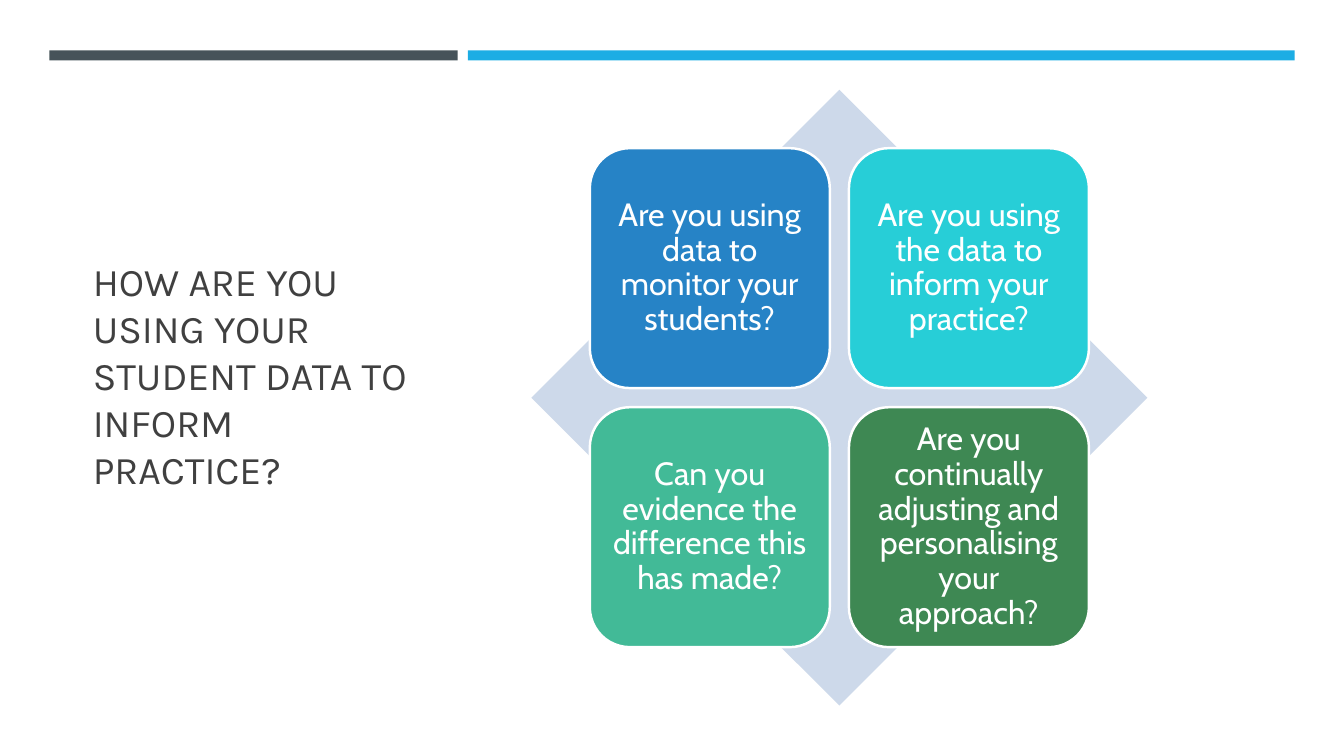
from pptx import Presentation
from pptx.dml.color import RGBColor
from pptx.enum.shapes import MSO_SHAPE as Shape
from pptx.enum.text import MSO_ANCHOR as Anchor, MSO_AUTO_SIZE as AutoSize, PP_ALIGN as Align
from pptx.util import Inches, Pt

WHITE = RGBColor(0xFF, 0xFF, 0xFF)
CHARCOAL = RGBColor(0x40, 0x40, 0x40)
SLATE = RGBColor(0x46, 0x53, 0x59)
SKY = RGBColor(0x1C, 0xAD, 0xE4)
PALE_BLUE = RGBColor(0xCD, 0xD9, 0xEA)
BLUE = RGBColor(0x26, 0x83, 0xC6)
TURQUOISE = RGBColor(0x27, 0xCE, 0xD7)
MINT = RGBColor(0x42, 0xBA, 0x97)
GREEN = RGBColor(0x3E, 0x88, 0x53)

QUESTIONS = [
    ("Are you using data to monitor your students?", BLUE),
    ("Are you using the data to inform your practice?", TURQUOISE),
    ("Can you evidence the difference this has made?", MINT),
    ("Are you continually adjusting and personalising your approach?", GREEN),
]


def write(frame, wording, *, font, size, color, align, spacing=1.0, inset=0.1):
    frame.word_wrap = True
    frame.auto_size = AutoSize.NONE
    frame.vertical_anchor = Anchor.MIDDLE
    frame.margin_left = frame.margin_right = Inches(inset)
    frame.margin_top = frame.margin_bottom = Inches(inset)
    paragraph = frame.paragraphs[0]
    paragraph.alignment = align
    paragraph.line_spacing = spacing
    run = paragraph.add_run()
    run.text = wording
    run.font.name = font
    run.font.size = Pt(size)
    run.font.color.rgb = color


class QuestionSlide:
    """Holds the slide and the style of its title, bars and question cards."""

    heading_font = "Karla"
    card_font = "Cabin"

    def __init__(self, deck):
        self.slide = deck.slides.add_slide(deck.slide_layouts[5])

    def title(self, wording, left, top, width, height):
        heading = self.slide.shapes.title
        heading.left, heading.top = Inches(left), Inches(top)
        heading.width, heading.height = Inches(width), Inches(height)
        write(heading.text_frame, wording, font=self.heading_font, size=28,
              color=CHARCOAL, align=Align.LEFT)

    def block(self, kind, left, top, width, height, fill):
        block = self.slide.shapes.add_shape(
            kind, Inches(left), Inches(top), Inches(width), Inches(height))
        block.shadow.inherit = False
        block.fill.solid()
        block.fill.fore_color.rgb = fill
        block.line.fill.background()
        return block

    def card(self, question, left, top, side, fill):
        card = self.block(Shape.ROUNDED_RECTANGLE, left, top, side, side, fill)
        card.line.color.rgb = WHITE
        card.line.width = Pt(1.75)
        write(card.text_frame, question, font=self.card_font, size=23,
              color=WHITE, align=Align.CENTER, spacing=0.9)


def main():
    deck = Presentation()
    deck.slide_width, deck.slide_height = Inches(13.33), Inches(7.5)
    page = QuestionSlide(deck)

    page.title("HOW ARE YOU USING YOUR STUDENT DATA TO INFORM PRACTICE?",
               0.82, 1.14, 3.34, 5.15)
    page.block(Shape.RECTANGLE, 0.49, 0.5, 4.05, 0.1, SLATE)
    page.block(Shape.RECTANGLE, 4.64, 0.5, 8.2, 0.1, SKY)
    page.block(Shape.DIAMOND, 5.27, 0.89, 6.11, 6.11, PALE_BLUE)

    side, pitch = 2.38, 2.57
    for index, (question, fill) in enumerate(QUESTIONS):
        row, column = divmod(index, 2)
        page.card(question, 5.85 + column * pitch, 1.47 + row * pitch, side, fill)

    deck.save("out.pptx")


if __name__ == "__main__":
    main()
